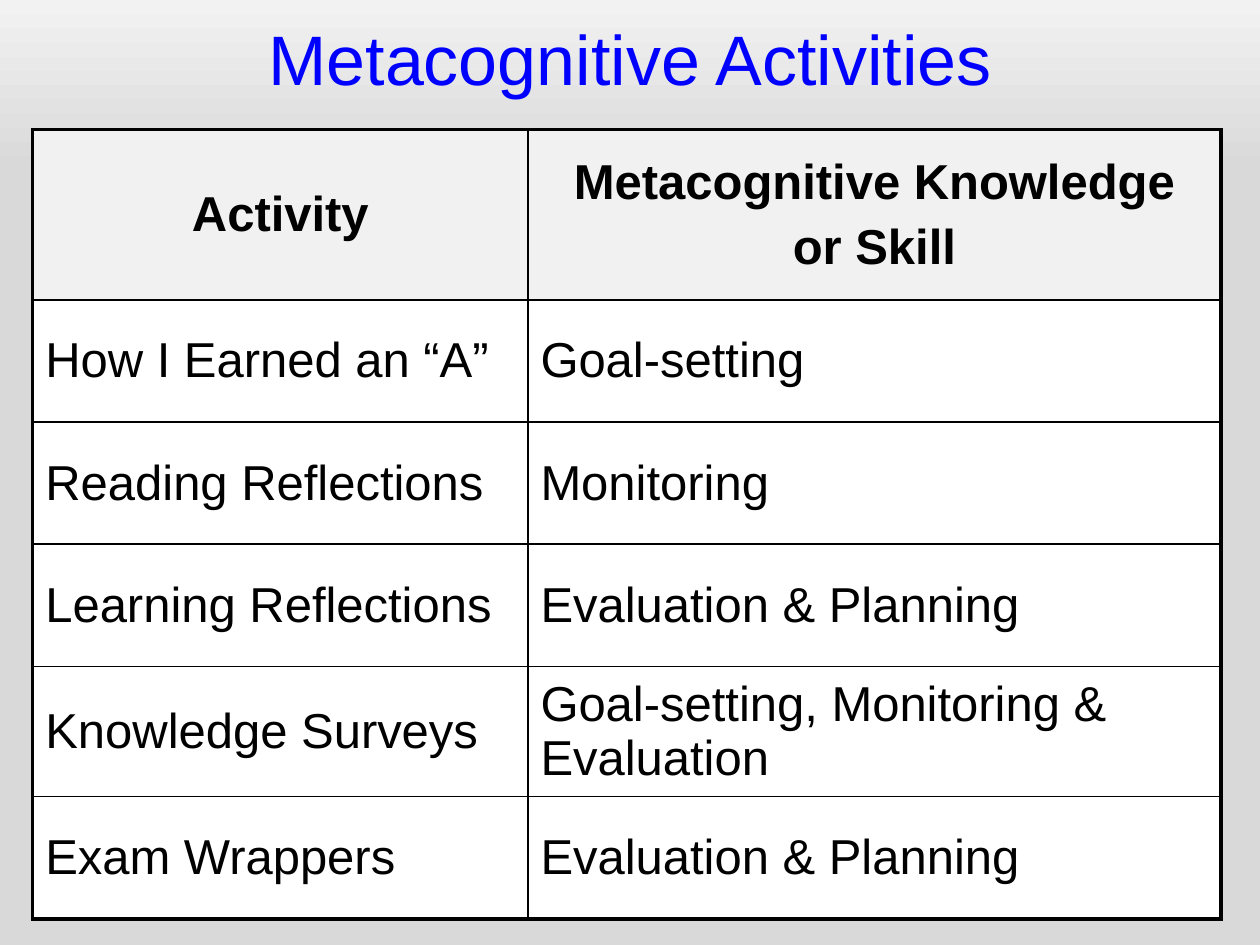
from dataclasses import dataclass

from lxml import etree
from pptx import Presentation
from pptx.dml.color import RGBColor
from pptx.enum.text import MSO_ANCHOR, MSO_AUTO_SIZE, PP_ALIGN
from pptx.oxml.ns import qn
from pptx.util import Inches, Pt

CENTER, LEFT = PP_ALIGN.CENTER, PP_ALIGN.LEFT
MIDDLE = MSO_ANCHOR.MIDDLE
FIT_SHAPE = MSO_AUTO_SIZE.SHAPE_TO_FIT_TEXT
TITLE_ONLY = 5


@dataclass(frozen=True)
class Theme:
    font: str = "Arial"
    title_size: float = 40
    table_size: float = 28
    paragraph_gap: float = 5.6
    outer_line: float = 2.25
    inner_line: float = 1
    title: str = "0000FF"
    text: str = "000000"
    border: str = "000000"
    header_fill: str = "F1F1F1"
    body_fill: str = "FFFFFF"
    background_top: str = "F2F2F2"
    background: str = "D9D9D9"


@dataclass(frozen=True)
class Row:
    activity: str
    skill: str
    height: float = 0.97
    header: bool = False


THEME = Theme()
COLUMN_WIDTHS = (3.93, 5.5)
ROWS = (
    Row("Activity", "Metacognitive Knowledge\nor Skill", 1.35, header=True),
    Row("How I Earned an “A”", "Goal-setting"),
    Row("Reading Reflections", "Monitoring"),
    Row("Learning Reflections", "Evaluation & Planning"),
    Row("Knowledge Surveys", "Goal-setting, Monitoring & Evaluation", 1.03),
    Row("Exam Wrappers", "Evaluation & Planning"),
)


def style_font(font, size: float, color: str, bold: bool = False) -> None:
    font.name = THEME.font
    font.size = Pt(size)
    font.bold = bold
    font.color.rgb = RGBColor.from_string(color)


def paint_background(slide) -> None:
    """Fade from the light top edge to the flat grey below."""
    fill = slide.background.fill
    fill.gradient()
    fill.gradient_angle = 270
    stops = ((0, THEME.background_top), (0.18, THEME.background))
    for stop, (position, color) in zip(fill.gradient_stops, stops):
        stop.position = position
        stop.color.rgb = RGBColor.from_string(color)


def add_title(slide, text: str) -> None:
    title = slide.shapes.title
    title.left, title.top = Inches(0), Inches(0.07)
    title.width, title.height = Inches(10), Inches(0.77)
    frame = title.text_frame
    frame.text = text
    frame.word_wrap = True
    frame.auto_size = FIT_SHAPE
    frame.vertical_anchor = MIDDLE
    heading = frame.paragraphs[0]
    heading.alignment = CENTER
    style_font(heading.font, THEME.title_size, THEME.title)


def draw_borders(cell, outer_edges: dict[str, bool]) -> None:
    """Draw the four edges, heavier where one lies on the table's outline."""
    properties = cell._tc.get_or_add_tcPr()
    for edge, is_outer in outer_edges.items():
        width = Pt(THEME.outer_line if is_outer else THEME.inner_line)
        line = etree.SubElement(properties, qn(f"a:ln{edge}"), w=str(int(width)))
        solid = etree.SubElement(line, qn("a:solidFill"))
        etree.SubElement(solid, qn("a:srgbClr"), val=THEME.border)


def fill_cell(cell, text: str, header: bool) -> None:
    cell.fill.solid()
    cell.fill.fore_color.rgb = RGBColor.from_string(
        THEME.header_fill if header else THEME.body_fill
    )
    cell.vertical_anchor = MIDDLE
    cell.text = text
    for index, paragraph in enumerate(cell.text_frame.paragraphs):
        paragraph.alignment = CENTER if header else LEFT
        if index:
            paragraph.space_before = Pt(THEME.paragraph_gap)
        style_font(paragraph.font, THEME.table_size, THEME.text, header)


def add_activity_table(slide, rows: tuple[Row, ...]) -> None:
    table = slide.shapes.add_table(
        len(rows), len(COLUMN_WIDTHS), Inches(0.26), Inches(1.03),
        Inches(sum(COLUMN_WIDTHS)), Inches(sum(row.height for row in rows)),
    ).table
    table.horz_banding = False
    table.first_row = False
    for column, width in zip(table.columns, COLUMN_WIDTHS):
        column.width = Inches(width)
    for r, row in enumerate(rows):
        table.rows[r].height = Inches(row.height)
        for c, text in enumerate((row.activity, row.skill)):
            cell = table.cell(r, c)
            draw_borders(cell, {
                "L": c == 0,
                "R": c == len(COLUMN_WIDTHS) - 1,
                "T": r == 0,
                "B": r == len(rows) - 1,
            })
            fill_cell(cell, text, row.header)


def main() -> None:
    presentation = Presentation()
    presentation.slide_width = Inches(10)
    presentation.slide_height = Inches(7.5)
    slide = presentation.slides.add_slide(presentation.slide_layouts[TITLE_ONLY])
    paint_background(slide)
    add_title(slide, "Metacognitive Activities")
    add_activity_table(slide, ROWS)
    presentation.save("out.pptx")


if __name__ == "__main__":
    main()
